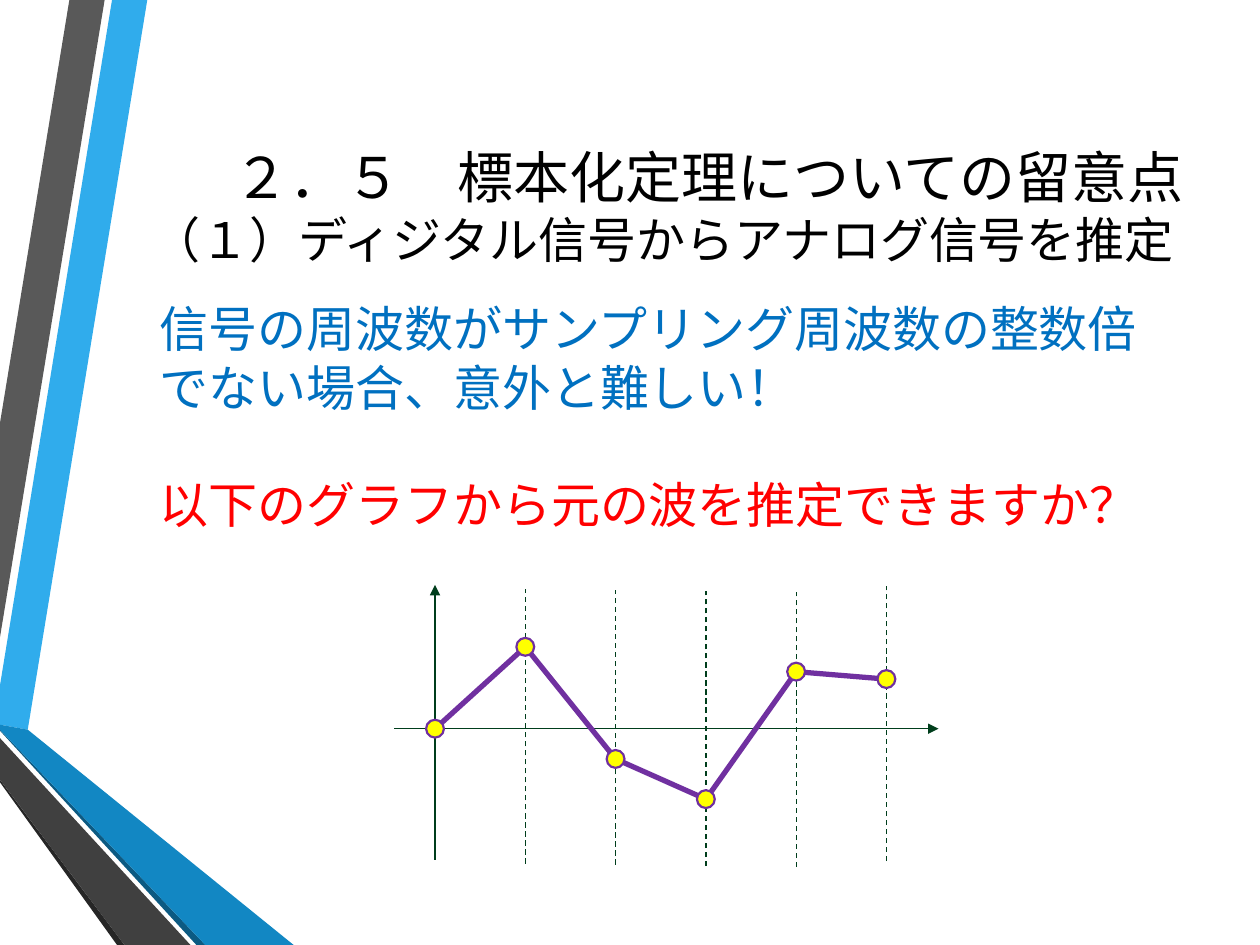
from dataclasses import dataclass
from itertools import pairwise

from lxml import etree
from pptx import Presentation
from pptx import util as u
from pptx.dml.color import RGBColor
from pptx.enum import dml, shapes, text
from pptx.oxml.ns import qn
from pptx.util import Cm


@dataclass(frozen=True)
class Theme:
    latin: str = "Calibri"
    japanese: str = "Noto Sans CJK JP"
    title_size: float = 32
    body_size: float = 28
    line_pitch: float = 33.5
    ink: str = "000000"
    statement: str = "0070C0"
    question: str = "FF0000"
    axis: str = "003E1C"
    wave: str = "7030A0"
    sample: str = "FFFF00"


THEME = Theme()
PAGE_WIDTH, PAGE_HEIGHT = 25.4, 19.05

# Colour and corner points (cm) of each folded ribbon, from back to front.
RIBBONS = [
    ("30ACEC", [(0, 13.82), (0, 14.61), (0.56, 14.71), (2.97, 0), (2.26, 0)]),
    ("595959", [(2.11, 0), (1.4, 0), (0, 8.53), (0, 12.85)]),
    ("262626", [(0, 15.72), (0, 15.77), (2.36, 19.05), (2.51, 19.05)]),
    ("0C5A82", [(0, 14.71), (0, 14.73), (3.96, 19.05), (4.14, 19.05)]),
    ("1287C3", [(0, 14.71), (4.14, 19.05), (5.92, 19.05), (0.56, 14.71), (0, 14.61)]),
    ("404040", [(0, 15.72), (2.51, 19.05), (3.84, 19.05), (0, 14.88)]),
]

SAMPLE_HEIGHTS = [0, 1.65, -0.61, -1.42, 1.15, 1.0]  # cm above the time axis
GUIDE_TOPS = [0.08, 0.1, 0.13, 0.15, 0.03]


def apply_format(target, values):
    for name, value in values.items():
        setattr(target, name, value)


def paint(fill, colour):
    fill.solid()
    fill.fore_color.rgb = RGBColor.from_string(colour)


def add_ribbons(page, left, top):
    for colour, corners in RIBBONS:
        points = [(Cm(left + x), Cm(top + y)) for x, y in corners]
        builder = page.shapes.build_freeform(*points[0])
        builder.add_line_segments(points[1:], close=True)
        ribbon = builder.convert_to_shape()
        ribbon.shadow.inherit = False
        paint(ribbon.fill, colour)
        ribbon.line.fill.background()


def add_text_frame(page, box, anchor):
    frame = page.shapes.add_textbox(*map(Cm, box)).text_frame
    apply_format(frame, {"word_wrap": True, "vertical_anchor": anchor})
    return frame


def add_span(para, words, size, colour, latin):
    span = para.add_run()
    span.text = words
    apply_format(span.font, {"size": u.Pt(size), "name": latin})
    span.font.color.rgb = RGBColor.from_string(colour)
    east_asian = etree.SubElement(span.font._element, qn("a:ea"))
    east_asian.set("typeface", THEME.japanese)


def add_title(page, box):
    para = add_text_frame(page, box, text.MSO_ANCHOR.MIDDLE).paragraphs[0]
    apply_format(para, {"alignment": text.PP_ALIGN.RIGHT,
                        "line_spacing": u.Pt(THEME.line_pitch)})
    add_span(para, "２．５　標本化定理についての留意点", THEME.title_size, THEME.ink, THEME.latin)
    para.add_line_break()
    add_span(para, "（１）ディジタル信号からアナログ信号を推定 ", THEME.body_size, THEME.ink, THEME.latin)


def add_body(page, box):
    frame = add_text_frame(page, box, text.MSO_ANCHOR.TOP)
    statement, question = frame.paragraphs[0], frame.add_paragraph()
    for para, words, colour in [
        (statement, "信号の周波数がサンプリング周波数の整数倍でない場合、意外と難しい！", THEME.statement),
        (question, "以下のグラフから元の波を推定できますか？", THEME.question),
    ]:
        para.line_spacing = u.Pt(THEME.line_pitch)
        add_span(para, words, THEME.body_size, colour, THEME.japanese)
    question.space_before = u.Pt(THEME.line_pitch)


def add_line(page, start, end, colour, width, dash=None, arrow=False):
    line = page.shapes.add_connector(
        shapes.MSO_CONNECTOR.STRAIGHT, *map(Cm, (*start, *end)))
    line.line.color.rgb = RGBColor.from_string(colour)
    apply_format(line.line, {"width": u.Pt(width), "dash_style": dash})
    if arrow:
        etree.SubElement(line.line._get_or_add_ln(), qn("a:tailEnd")).set("type", "triangle")
    etree.SubElement(line._element.spPr, qn("a:effectLst"))


def add_sample_marker(page, centre, diameter=0.36):
    x, y = (value - diameter / 2 for value in centre)
    marker = page.shapes.add_shape(
        shapes.MSO_SHAPE.OVAL, *map(Cm, (x, y, diameter, diameter)))
    marker.shadow.inherit = False
    paint(marker.fill, THEME.sample)
    paint(marker.line.fill, THEME.wave)
    marker.line.width = u.Pt(1.25)


def add_sampled_wave(page, box):
    """Draw the axes, the sampling instants and the joined samples."""
    left, top, width, height = box
    origin_x, origin_y = left + 0.82, top + 2.9
    pitch, guide_height = 1.82, 5.54
    centres = [(origin_x + i * pitch, origin_y - value)
               for i, value in enumerate(SAMPLE_HEIGHTS)]

    add_line(page, (left, origin_y), (left + width, origin_y), THEME.axis, 0.75, arrow=True)
    add_line(page, (origin_x, top + guide_height), (origin_x, top), THEME.axis, 0.75, arrow=True)
    for (x, _), offset in zip(centres[1:], GUIDE_TOPS):
        guide_top = top + offset
        add_line(page, (x, guide_top + guide_height), (x, guide_top),
                 THEME.axis, 0.75, dash=dml.MSO_LINE.DASH)
    for start, end in pairwise(centres):
        add_line(page, start, end, THEME.wave, 3)
    for centre in centres:
        add_sample_marker(page, centre)


def main():
    deck = Presentation()
    apply_format(deck, {"slide_width": Cm(PAGE_WIDTH), "slide_height": Cm(PAGE_HEIGHT)})
    page = deck.slides.add_slide(deck.slide_layouts[6])
    add_ribbons(page, 0, 0)
    add_title(page, (2.72, 1.47, 21.41, 5.51))
    add_body(page, (2.97, 5.9, 21.16, 5.05))
    add_sampled_wave(page, (7.95, 11.79, 10.97, 5.69))
    deck.save("out.pptx")


if __name__ == "__main__":
    main()
